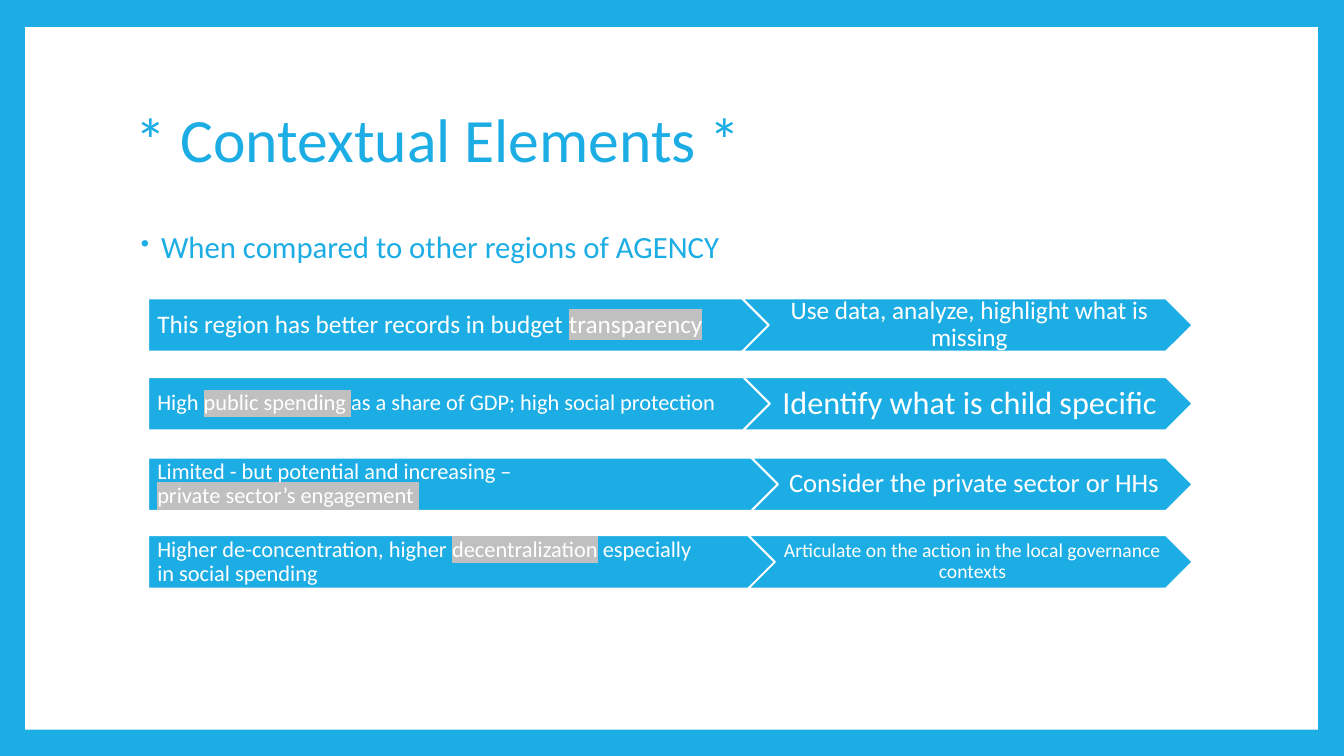
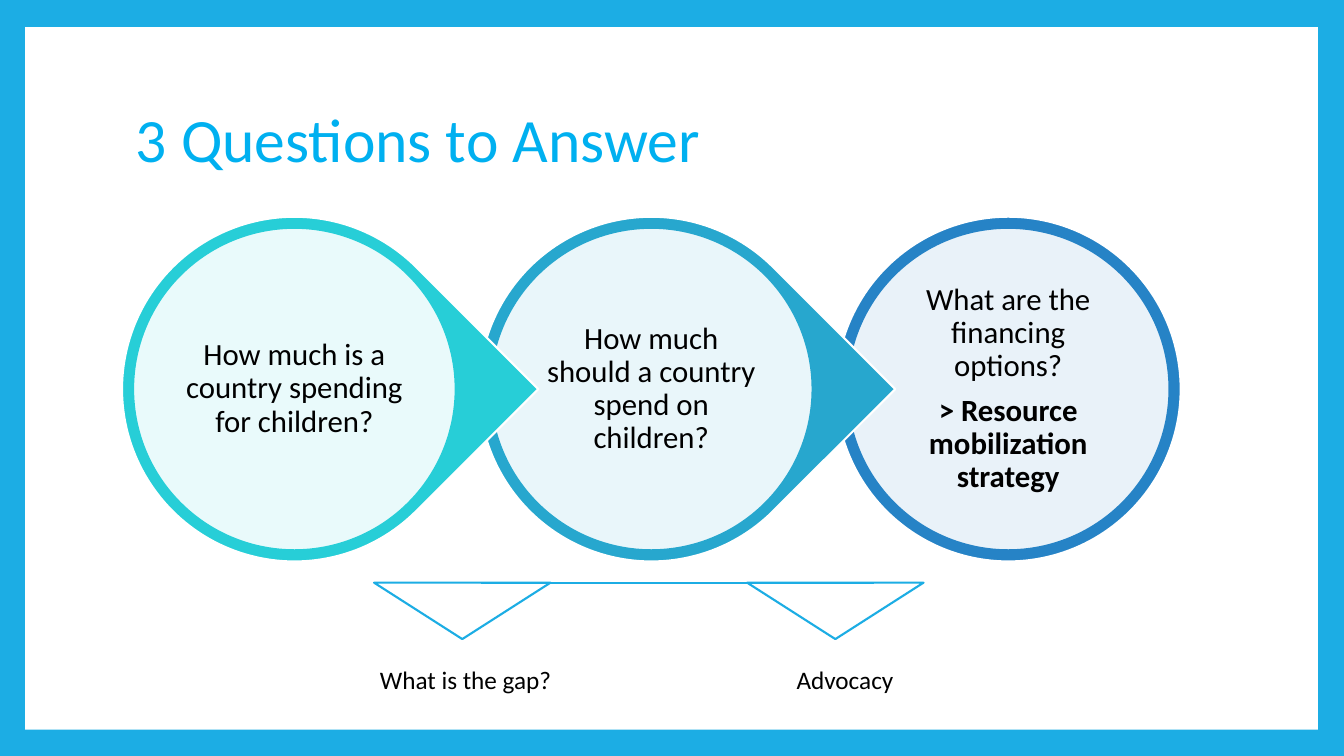
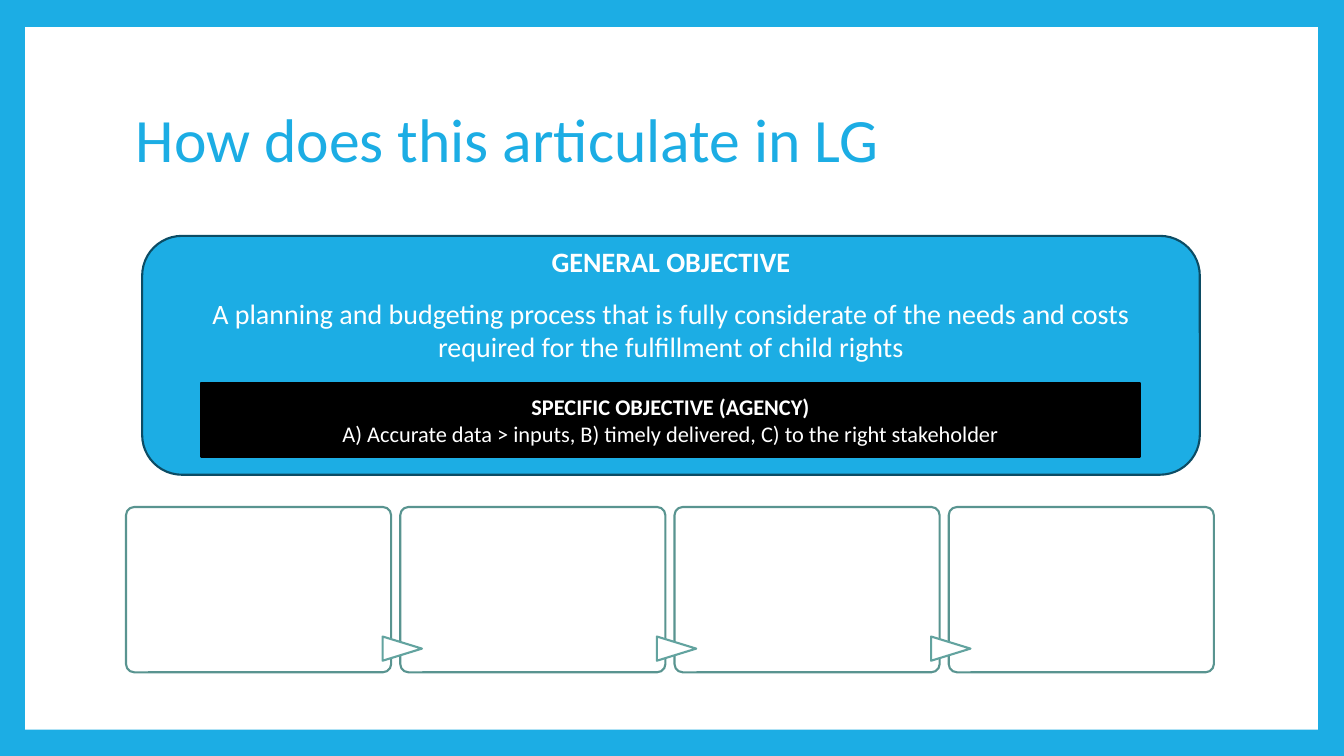
import pptx
import pptx.dml.color
import pptx.enum.shapes
import pptx.enum.text
import pptx.oxml
import pptx.oxml.ns
import pptx.util
from lxml import etree

Inches = pptx.util.Inches
Pt = pptx.util.Pt
SHAPE = pptx.enum.shapes.MSO_SHAPE
ALIGN = pptx.enum.text.PP_ALIGN
ANCHOR = pptx.enum.text.MSO_ANCHOR
qn = pptx.oxml.ns.qn

FONT = "Calibri"
BLUE, WHITE, BLACK, GREY = "1CADE4", "FFFFFF", "000000", "C0C0C0"
BRIGHT_BLUE, NAVY = "00B0F0", "0C4C64"
CARD_EDGE, ARROW_EDGE = "599490", "62A39F"
DEFAULT_INSETS = (0.1, 0.05, 0.1, 0.05)


def colour(value):
    """Turn a hex string into a colour."""
    return pptx.dml.color.RGBColor.from_string(value)


def add_element(parent, tag, **attributes):
    """Append an XML element with attributes."""
    element = etree.SubElement(parent, qn(tag))
    for name, value in attributes.items():
        element.set(name, value)
    return element


def add_shape(slide, kind, box, fill, line=None, rotation=0, opacity=None):
    """Add a flat preset shape with a solid fill and an optional outline."""
    shape = slide.shapes.add_shape(kind, *map(Inches, box))
    shape.shadow.inherit = False
    shape.rotation = rotation
    shape.fill.solid()
    shape.fill.fore_color.rgb = colour(fill)
    if opacity is not None:
        fill_colour = shape.fill._xPr.find(qn("a:solidFill"))[0]
        add_element(fill_colour, "a:alpha", val=str(opacity * 1000))
    if line:
        shape.line.color.rgb = colour(line)
        shape.line.width = Pt(1.5)
    else:
        shape.line.fill.background()
    return shape


def highlight(run):
    """Put a grey marker behind a run."""
    marker = add_element(run._r.get_or_add_rPr(), "a:highlight")
    add_element(marker, "a:srgbClr", val=GREY)


def write(shape, lines, size, text_colour, align=ALIGN.LEFT, anchor=ANCHOR.MIDDLE,
          insets=DEFAULT_INSETS, spacing=None, after=0, bold_lines=()):
    """Write paragraphs; parts between bars are highlighted."""
    frame = shape.text_frame
    frame.word_wrap = True
    frame.vertical_anchor = anchor
    frame.margin_left, frame.margin_top, frame.margin_right, frame.margin_bottom = map(Inches, insets)
    for index, line in enumerate(lines):
        paragraph = frame.add_paragraph() if index else frame.paragraphs[0]
        paragraph.alignment = align
        paragraph.line_spacing = spacing
        paragraph.space_after = Pt(after)
        paragraph.font.name = FONT
        paragraph.font.size = Pt(size)
        paragraph.font.color.rgb = colour(text_colour)
        paragraph.font.bold = index in bold_lines
        for part, text in enumerate(line.split("|")):
            if text:
                run = paragraph.add_run()
                run.text = text
                if part % 2:
                    highlight(run)


def add_text(slide, box, lines, size, text_colour, **options):
    """Add a text box."""
    shape = slide.shapes.add_textbox(*map(Inches, box))
    write(shape, lines, size, text_colour, **options)
    return shape


def add_framed_slide(presentation, title, title_colour=BLUE):
    """Add a slide with the blue border, white panel and title."""
    slide = presentation.slides.add_slide(presentation.slide_layouts[6])
    slide.background.fill.solid()
    slide.background.fill.fore_color.rgb = colour(BLUE)
    add_shape(slide, SHAPE.RECTANGLE, (0.25, 0.27, 12.82, 6.97), WHITE)
    add_text(slide, (1.25, 0.67, 10.8, 1.48), [title], 44, title_colour, spacing=0.9)
    return slide


def add_bullet(slide, box, text):
    """Add a bulleted statement."""
    shape = add_text(slide, box, [text], 22, BLUE, anchor=ANCHOR.TOP, spacing=0.9)
    properties = shape.text_frame.paragraphs[0]._p.get_or_add_pPr()
    properties.set("marL", str(Inches(0.25)))
    properties.set("indent", str(Inches(-0.2)))
    bullet_colour = add_element(properties, "a:buClr")
    add_element(bullet_colour, "a:srgbClr", val=BLUE)
    bullet = [bullet_colour, add_element(properties, "a:buSzPct", val="80000"),
              add_element(properties, "a:buChar", char="•")]
    for element in bullet:
        properties.find(qn("a:defRPr")).addprevious(element)


def add_chevron_row(slide, box, plate_width, seam, finding, finding_size, action, action_size):
    """Add a finding that points to an action; the seam is measured from the left."""
    left, top, width, height = box
    plate = add_shape(slide, SHAPE.PENTAGON, (left, top, plate_width, height), BLUE, WHITE)
    write(plate, finding, finding_size, WHITE, insets=(0.09, 0.05, 0.02, 0.05), spacing=0.9)
    chevron = add_shape(slide, SHAPE.CHEVRON, (left + seam, top, width - seam, height), BLUE, WHITE)
    write(chevron, [action], action_size, WHITE, align=ALIGN.CENTER,
          insets=(0.06, 0.05, 0.02, 0.05), spacing=0.9)


def build_context(presentation):
    """Build the slide of contextual elements."""
    slide = add_framed_slide(presentation, "* Contextual Elements *")
    add_bullet(slide, (1.25, 2.25, 10.8, 0.5), "When compared to other regions of AGENCY")
    rows = [
        (2.96, 6.43, 5.89, ["This region has better records in budget |transparency|"], 18,
         "Use data, analyze, highlight what is missing", 18),
        (3.74, 6.8, 5.9, ["High |public spending |as a share of GDP; high social protection"], 16,
         "Identify what is child specific", 23),
        (4.54, 6.86, 5.98, ["Limited - but potential and increasing –", "|private sector’s engagement |"], 16,
         "Consider the private sector or HHs", 19),
        (5.31, 6.84, 5.95, ["Higher de-concentration, higher |decentralization| especially",
                            "in social spending"], 16,
         "Articulate on the action in the local governance contexts", 14),
    ]
    for top, *row in rows:
        add_chevron_row(slide, (1.47, top, 10.36, 0.53), *row)


def add_question(slide, box, ring_colour, lines, points_right):
    """Add a ringed question, with a pointer to the next one if asked."""
    left, top, size = box
    ring = 0.11
    inner = size - 2 * ring
    kind = SHAPE.TEAR if points_right else SHAPE.OVAL
    add_shape(slide, kind, (left, top, size, size), ring_colour, WHITE, 45 if points_right else 0)
    add_shape(slide, SHAPE.OVAL, (left + ring, top + ring, inner, inner), WHITE)\
        .fill.fore_color.rgb = colour(ring_colour)
    disc = add_shape(slide, SHAPE.OVAL, (left + ring, top + ring, inner, inner),
                     WHITE, ring_colour, opacity=90)
    write(disc, lines, 22, BLACK, align=ALIGN.CENTER, insets=(0.03,) * 4,
          spacing=0.9, after=7.7, bold_lines=(1,))


def add_gap_marker(slide, box, label, label_box, align):
    """Add a downward triangle with a label below it."""
    add_shape(slide, SHAPE.ISOSCELES_TRIANGLE, box, WHITE, BLUE, 180)
    add_text(slide, label_box, [label], 18, BLACK, align=align, anchor=ANCHOR.TOP)


def build_questions(presentation):
    """Build the slide of three linked questions."""
    slide = add_framed_slide(presentation, "3 Questions to Answer", BRIGHT_BLUE)
    questions = [
        ("27CED7", ["How much is a country spending for children?"]),
        ("27A7CE", ["How much should a country spend on children?"]),
        ("2683C6", ["What are the financing options?", "> Resource mobilization strategy"]),
    ]
    last = len(questions) - 1
    for index in range(last, -1, -1):
        add_question(slide, (1.21 + 3.54 * index, 2.15, 3.42), *questions[index], index < last)
    markers = [(3.71, "What is the gap?", ALIGN.LEFT), (7.41, "Advocacy", ALIGN.CENTER)]
    for left, label, align in markers:
        add_gap_marker(slide, (left, 5.78, 1.75, 0.56), label, (left - 0.04, 6.54, 2.02, 0.4), align)
    connector = slide.shapes.add_connector(pptx.enum.shapes.MSO_CONNECTOR.STRAIGHT,
                                           *map(Inches, (4.77, 5.78, 8.67, 5.78)))
    connector.line.color.rgb = colour(BLUE)
    connector.line.width = Pt(1.5)
    add_element(connector._element.spPr, "a:effectLst")


def add_objectives(slide, box):
    """Add the general objective with the specific one inside it."""
    left, top, width, height = box
    general = add_shape(slide, SHAPE.ROUNDED_RECTANGLE, box, BLUE, NAVY)
    write(general, ["GENERAL OBJECTIVE",
                    "A planning and budgeting process that is fully considerate of the needs "
                    "and costs required for the fulfillment of child rights"],
          20, WHITE, align=ALIGN.CENTER, insets=(0.1, 0, 0.1, 1.02), after=12.8, bold_lines=(0,))
    specific = add_shape(slide, SHAPE.RECTANGLE, (left + 0.58, top + 1.46, width - 1.17, 0.73), BLACK, BLACK)
    write(specific, ["SPECIFIC OBJECTIVE (AGENCY)",
                     "A) Accurate data > inputs, B) timely delivered, C) to the right stakeholder"],
          16, WHITE, align=ALIGN.CENTER, bold_lines=(0,))


def add_card_chain(slide, box, count, gap):
    """Add equal empty cards joined by small arrows."""
    left, top, width, height = box
    card_width = (width - gap * (count - 1)) / count
    for index in range(count):
        card_left = left + index * (card_width + gap)
        card = add_shape(slide, SHAPE.ROUNDED_RECTANGLE, (card_left, top, card_width, height),
                         WHITE, CARD_EDGE)
        card.adjustments[0] = 0.05
        if index:
            add_shape(slide, SHAPE.FLOWCHART_EXTRACT, (card_left - 0.1, top + 1.21, 0.24, 0.39),
                      WHITE, ARROW_EDGE, 90)


def build_articulation(presentation):
    """Build the slide of objectives and steps."""
    slide = add_framed_slide(presentation, "How does this articulate in LG")
    add_objectives(slide, (1.41, 2.34, 10.49, 2.37))
    add_card_chain(slide, (1.25, 5.03, 10.79, 1.64), 4, 0.09)


def main():
    """Build and save the presentation."""
    presentation = pptx.Presentation()
    presentation.slide_width = Inches(13.33)
    presentation.slide_height = Inches(7.5)
    build_context(presentation)
    build_questions(presentation)
    build_articulation(presentation)
    presentation.save("out.pptx")


if __name__ == "__main__":
    main()
